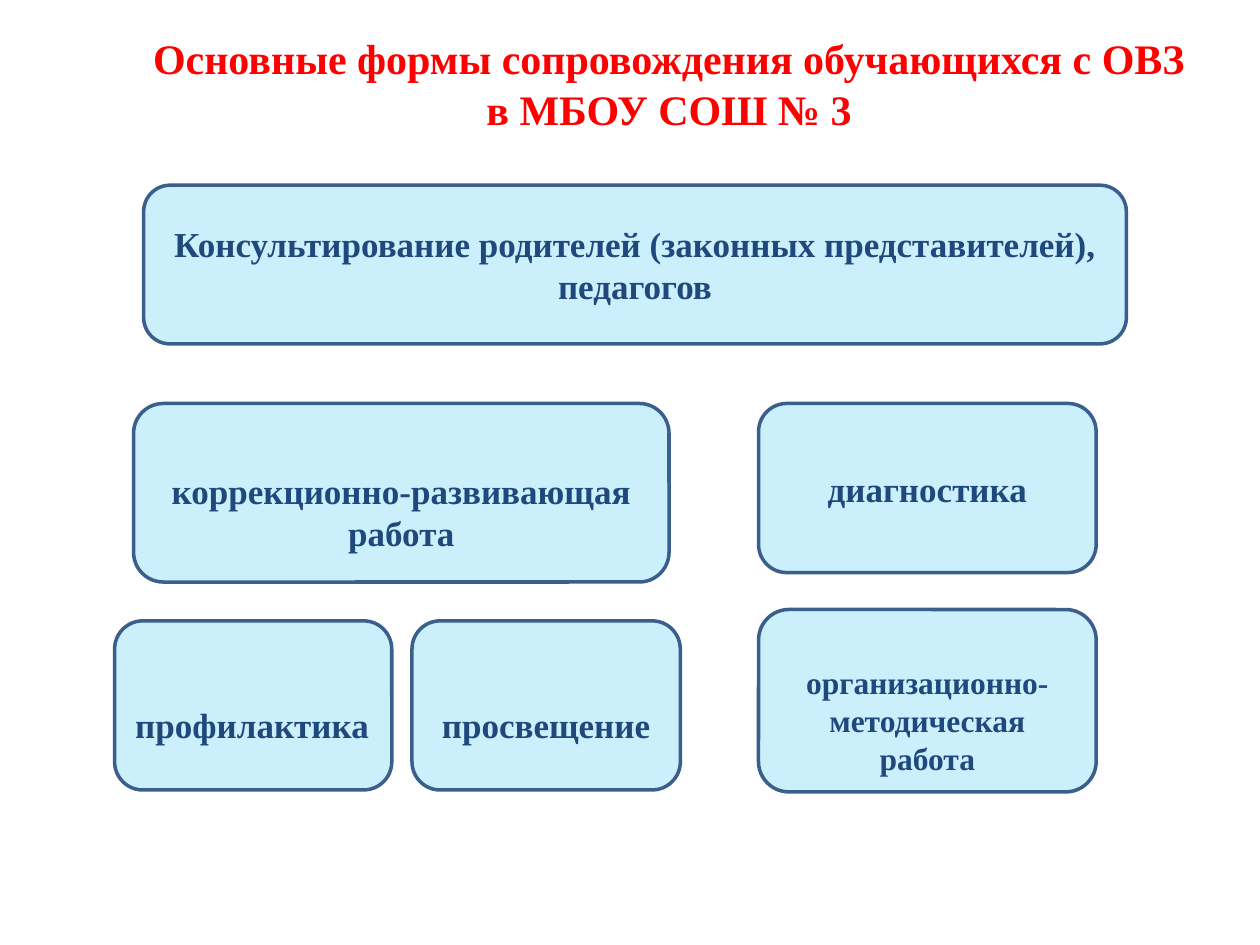
import pptx
import pptx.util
import pptx.dml.color
import pptx.enum.shapes
import pptx.enum.text
import pptx.oxml.ns
import lxml.etree

WIDE, HIGH = 10, 7.5
FONT = "Times New Roman"
RED, NAVY, SKY, EDGE = "FF0000", "1F497D", "00B0F0", "3A5F8C"
CLEAR = 20
PAD, DROP = 0.05, 0.35
LEFT = pptx.enum.text.PP_ALIGN.LEFT
MID = pptx.enum.text.PP_ALIGN.CENTER

TITLE = "Основные формы сопровождения обучающихся с ОВЗ в МБОУ СОШ № 3"
RIGHT = (60.2, 26.8)
ROW = (65.7, 17.9)

# text, (left, width) and (top, height) in percent, size, align, top inset
BOXES = [
    ("Консультирование родителей (законных представителей), педагогов",
     (11.4, 78), (19.6, 16.8), 20, MID, PAD),
    ("коррекционно-развивающая работа", (10.6, 42.5), (42.7, 18.9), 20, MID, DROP),
    ("диагностика", RIGHT, (42.7, 17.9), 20, MID, PAD),
    ("профилактика", (9.1, 22), ROW, 20, LEFT, DROP),
    ("организационно- методическая работа", RIGHT, (64.5, 19.3), 18, MID, DROP),
    ("просвещение", (32.7, 21.3), ROW, 20, MID, DROP),
]


def color(code):
    return pptx.dml.color.RGBColor.from_string(code)


def place(col, row):
    (left, width), (top, height) = col, row
    return [pptx.util.Inches(part * side / 100) for part, side in
            ((left, WIDE), (top, HIGH), (width, WIDE), (height, HIGH))]


def write(shape, text, size, code, align):
    shape.text_frame.word_wrap = True
    line = shape.text_frame.paragraphs[0]
    line.text = text
    line.alignment = align
    line.font.name = FONT
    line.font.size = pptx.util.Pt(size)
    line.font.bold = True
    line.font.color.rgb = color(code)


def card(slide, text, col, row, size, align, inset):
    kind = pptx.enum.shapes.MSO_SHAPE.ROUNDED_RECTANGLE
    box = slide.shapes.add_shape(kind, *place(col, row))
    box.shadow.inherit = False
    box.fill.solid()
    box.fill.fore_color.rgb = color(SKY)
    tint = box.fill._xPr.find(".//" + pptx.oxml.ns.qn("a:srgbClr"))
    alpha = lxml.etree.SubElement(tint, pptx.oxml.ns.qn("a:alpha"))
    alpha.set("val", str(CLEAR * 1000))
    box.line.color.rgb = color(EDGE)
    box.line.width = pptx.util.Pt(2)
    box.text_frame.vertical_anchor = pptx.enum.text.MSO_ANCHOR.MIDDLE
    box.text_frame.margin_top = pptx.util.Inches(inset)
    write(box, text, size, NAVY, align)


def main():
    deck = pptx.Presentation()
    deck.slide_width = pptx.util.Inches(WIDE)
    deck.slide_height = pptx.util.Inches(HIGH)
    slide = deck.slides.add_slide(deck.slide_layouts[6])
    head = slide.shapes.add_textbox(*place((10.6, 85), (2.8, 12.1)))
    write(head, TITLE, 24, RED, MID)
    for box in BOXES:
        card(slide, *box)
    deck.save("out.pptx")


if __name__ == "__main__":
    main()
